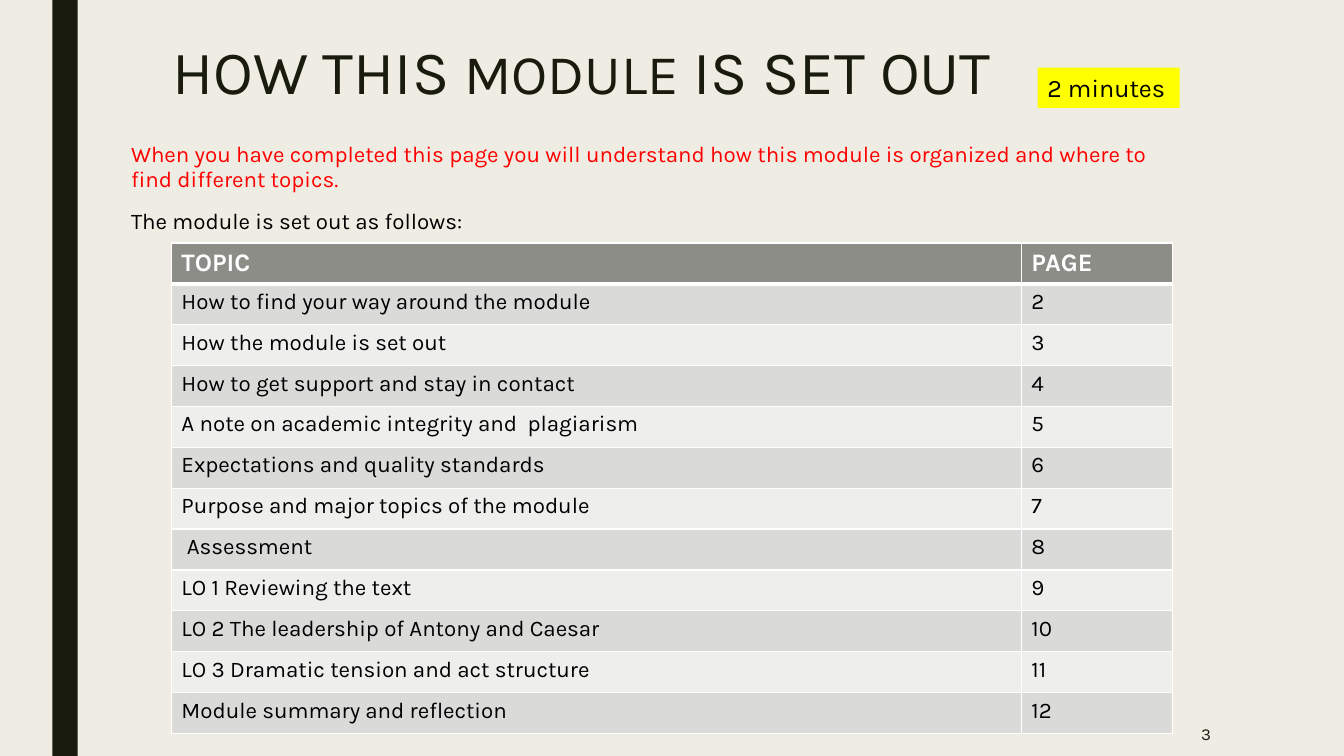
from lxml.etree import SubElement
from pptx import Presentation
from pptx.dml.color import RGBColor
from pptx.enum.shapes import MSO_SHAPE
from pptx.enum.text import MSO_ANCHOR, PP_ALIGN
from pptx.oxml.ns import qn
from pptx.util import Inches, Pt

FONT = "Karla"
CREAM = RGBColor(0xEF, 0xED, 0xE3)
DARK = RGBColor(0x19, 0x1B, 0x0E)
RED = RGBColor(0xFF, 0x00, 0x00)
BLACK = RGBColor(0x00, 0x00, 0x00)
WHITE = RGBColor(0xFF, 0xFF, 0xFF)
YELLOW = RGBColor(0xFF, 0xFF, 0x00)
HEADER_GREY = RGBColor(0x8C, 0x8D, 0x86)
BAND_GREYS = [RGBColor(0xEE, 0xEE, 0xED), RGBColor(0xDA, 0xDB, 0xD9)]

TITLE = [("HOW THIS ", 44), ("MODULE", 40), (" IS SET OUT", 44)]
INTRO = [
    ("When you have completed this page you will understand how this module "
     "is organized and where to find different topics.", RED),
    ("The module is set out as follows:", BLACK),
]
HEADER = ("TOPIC", "PAGE")
TOPICS = [
    "How to find your way around the module",
    "How the module is set out",
    "How to get support and stay in contact",
    "A note on academic integrity and  plagiarism",
    "Expectations and quality standards",
    "Purpose and major topics of the module",
    " Assessment",
    "LO 1 Reviewing the text",
    "LO 2 The leadership of Antony and Caesar",
    "LO 3 Dramatic tension and act structure",
    "Module summary and reflection",
]
FIRST_PAGE = 2
COLUMN_WIDTHS = (8.43, 1.5)
TABLE_HEIGHT = 4.87


def add_span(para, text, size, color, bold=False):
    span = para.add_run()
    span.text = text
    span.font.name = FONT
    span.font.size = Pt(size)
    span.font.bold = bold
    span.font.color.rgb = color


def place(shape, left, top, width, height):
    shape.left, shape.top = Inches(left), Inches(top)
    shape.width, shape.height = Inches(width), Inches(height)


def add_rectangle(page, left, top, width, height, color):
    box = page.shapes.add_shape(MSO_SHAPE.RECTANGLE, Inches(left), Inches(top),
                                Inches(width), Inches(height))
    box.shadow.inherit = False
    box.fill.solid()
    box.fill.fore_color.rgb = color
    box.line.fill.background()
    return box


def add_border(cell, side, points):
    line = SubElement(cell._tc.get_or_add_tcPr(), qn(f"a:ln{side}"), w=str(Pt(points)))
    fill = SubElement(line, qn("a:solidFill"))
    SubElement(fill, qn("a:srgbClr"), val=str(WHITE))


def add_title(page):
    title = page.shapes.title
    place(title, 1.61, 0.34, 10.5, 0.81)
    title.text_frame.vertical_anchor = MSO_ANCHOR.MIDDLE
    para = title.text_frame.paragraphs[0]
    para.alignment = PP_ALIGN.LEFT
    para.line_spacing = 0.89
    for text, size in TITLE:
        add_span(para, text, size, DARK)


def add_intro(page):
    body = page.placeholders[1]
    place(body, 1.2, 1.36, 10.5, 5.92)
    for index, (text, color) in enumerate(INTRO):
        frame = body.text_frame
        para = frame.add_paragraph() if index else frame.paragraphs[0]
        para.line_spacing = 0.94
        para.space_before, para.space_after = Pt(10), Pt(2)
        properties = para._p.get_or_add_pPr()
        properties.set("marL", "0")
        properties.set("indent", "0")
        SubElement(properties, qn("a:buNone"))
        add_span(para, text, 16, color)


def add_contents(page):
    rows = [HEADER] + [(topic, str(number)) for number, topic in enumerate(TOPICS, FIRST_PAGE)]
    table = page.shapes.add_table(len(rows), len(HEADER), Inches(1.7), Inches(2.41),
                                  Inches(sum(COLUMN_WIDTHS)), Inches(TABLE_HEIGHT)).table
    for column, width in zip(table.columns, COLUMN_WIDTHS):
        column.width = Inches(width)
    for index, values in enumerate(rows):
        is_header = index == 0
        table.rows[index].height = Inches(TABLE_HEIGHT / len(rows))
        for column, text in enumerate(values):
            cell = table.cell(index, column)
            borders = {"L": 1, "R": 1, "T": 3 if index == 1 else 1, "B": 3 if is_header else 1}
            for side, points in borders.items():
                add_border(cell, side, points)
            cell.fill.solid()
            cell.fill.fore_color.rgb = HEADER_GREY if is_header else BAND_GREYS[index % 2]
            add_span(cell.text_frame.paragraphs[0], text, 18 if is_header else 16,
                     WHITE if is_header else BLACK, is_header)


def add_duration(page):
    box = add_rectangle(page, 10.29, 0.67, 1.41, 0.4, YELLOW)
    box.text_frame.word_wrap = True
    box.text_frame.vertical_anchor = MSO_ANCHOR.TOP
    para = box.text_frame.paragraphs[0]
    para.alignment = PP_ALIGN.LEFT
    add_span(para, "2 minutes", 18, BLACK)


def add_page_number(page):
    box = page.shapes.add_textbox(Inches(10.36), Inches(7.06), Inches(1.75), Inches(0.44))
    box.text_frame.word_wrap = True
    box.text_frame.vertical_anchor = MSO_ANCHOR.MIDDLE
    para = box.text_frame.paragraphs[0]
    para.alignment = PP_ALIGN.RIGHT
    add_span(para, "3", 12, DARK)


def main():
    deck = Presentation()
    deck.slide_width, deck.slide_height = Inches(13.33), Inches(7.5)
    page = deck.slides.add_slide(deck.slide_layouts[1])
    page.background.fill.solid()
    page.background.fill.fore_color.rgb = CREAM
    add_rectangle(page, 0.52, 0, 0.25, 7.5, DARK)
    add_title(page)
    add_intro(page)
    add_contents(page)
    add_duration(page)
    add_page_number(page)
    deck.save("out.pptx")


if __name__ == "__main__":
    main()
